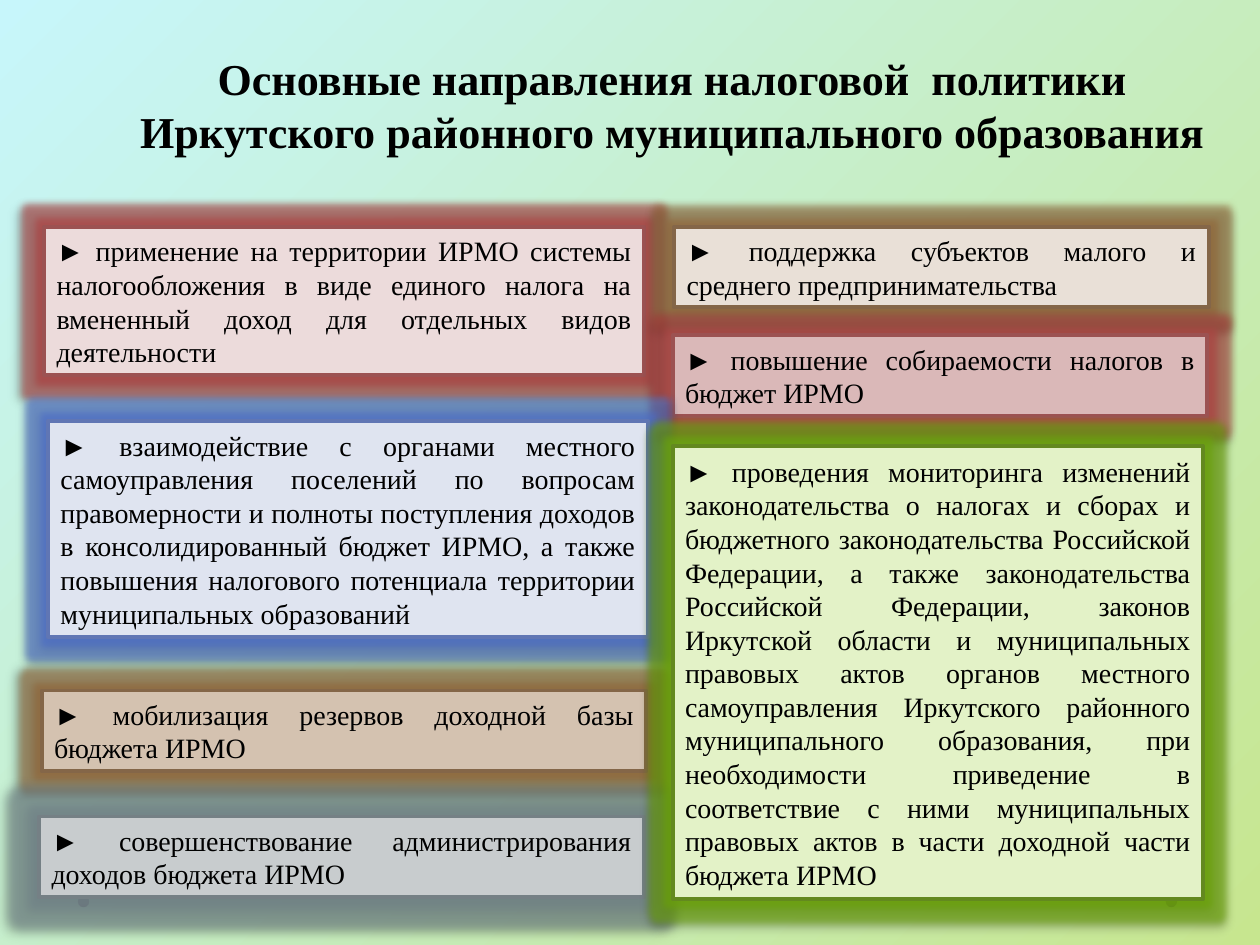
import lxml.etree
import pptx
import pptx.dml.color
import pptx.enum.shapes
import pptx.enum.text
import pptx.oxml
import pptx.oxml.ns
import pptx.util

RGB = pptx.dml.color.RGBColor
Cm = pptx.util.Cm
Pt = pptx.util.Pt
ALIGN = pptx.enum.text.PP_ALIGN
ANCHOR = pptx.enum.text.MSO_ANCHOR
SHAPE = pptx.enum.shapes.MSO_SHAPE

BLACK = RGB(0x00, 0x00, 0x00)
DOT_GRAY = RGB(0x80, 0x80, 0x80)
SKY = RGB(0xC7, 0xF6, 0xFB)
LIME = RGB(0xC7, 0xE6, 0x8F)
# Line colours, each shared by a box border and its glow
RED = RGB(0x9C, 0x52, 0x52)
BROWN = RGB(0x84, 0x66, 0x48)
BLUE = RGB(0x60, 0x76, 0xB4)
GRAY = RGB(0x75, 0x80, 0x85)
GREEN = RGB(0x63, 0x89, 0x1F)
# Box fills
PALE_RED = RGB(0xEC, 0xDB, 0xDB)
ROSE = RGB(0xDA, 0xB8, 0xB8)
PALE_BROWN = RGB(0xE9, 0xE0, 0xD7)
TAN = RGB(0xD4, 0xC2, 0xB0)
PALE_BLUE = RGB(0xDF, 0xE4, 0xF0)
PALE_GRAY = RGB(0xC8, 0xCC, 0xCE)
PALE_GREEN = RGB(0xE3, 0xF2, 0xC7)

# Left, top, width, height in cm; fill, line, glow in points, shadow angle, text
DIRECTIONS = [
    (0.89, 4.57, 12.09, 3.0, PALE_RED, RED, 8, 135,
     "применение на территории ИРМО системы налогообложения в виде единого "
     "налога на вмененный доход для отдельных видов деятельности"),
    (13.59, 4.57, 10.78, 1.63, PALE_BROWN, BROWN, 8, 90,
     "поддержка субъектов малого и среднего предпринимательства"),
    (13.56, 6.76, 10.78, 1.63, ROSE, RED, 8, 90,
     "повышение собираемости налогов в бюджет ИРМО"),
    (0.97, 8.48, 12.09, 4.37, PALE_BLUE, BLUE, 8, 90,
     "взаимодействие с органами местного самоуправления поселений по вопросам "
     "правомерности и полноты поступления доходов в консолидированный бюджет "
     "ИРМО, а также повышения налогового потенциала территории муниципальных "
     "образований"),
    (0.84, 13.92, 12.19, 1.63, TAN, BROWN, 8, 180,
     "мобилизация резервов доходной базы бюджета ИРМО"),
    (0.79, 16.46, 12.19, 1.63, PALE_GRAY, GRAY, 11, 135,
     "совершенствование администрирования доходов бюджета ИРМО"),
    (13.56, 8.99, 10.69, 9.14, PALE_GREEN, GREEN, 8, 90,
     "проведения мониторинга изменений законодательства о налогах и сборах и "
     "бюджетного законодательства Российской Федерации, а также "
     "законодательства Российской Федерации, законов Иркутской области и "
     "муниципальных правовых актов органов местного самоуправления Иркутского "
     "районного муниципального образования, при необходимости приведение в "
     "соответствие с ними муниципальных правовых актов в части доходной части "
     "бюджета ИРМО"),
]


class SlideBuilder:
    font_name = "Times New Roman"
    title_size = Pt(25.2)
    text_size = Pt(16)
    line_width = Pt(2.25)

    def __init__(self, page):
        self.page = page

    def background(self, start, end):
        fill = self.page.background.fill
        fill.gradient()
        fill.gradient_angle = 315
        for stop, color in zip(fill.gradient_stops, (start, end)):
            stop.color.rgb = color

    def style(self, para, size, align, bold=False):
        para.alignment = align
        para.font.name = self.font_name
        para.font.size = size
        para.font.bold = bold
        para.font.color.rgb = BLACK

    def title(self, left, top, width, height, text):
        box = self.page.shapes.title
        box.left, box.top, box.width, box.height = map(Cm, (left, top, width, height))
        frame = box.text_frame
        frame.text = text
        frame.vertical_anchor = ANCHOR.BOTTOM
        frame.auto_size = pptx.enum.text.MSO_AUTO_SIZE.NONE
        self.style(frame.paragraphs[0], self.title_size, ALIGN.CENTER, True)

    def shape(self, kind, left, top, width, height, fill):
        item = self.page.shapes.add_shape(kind, *map(Cm, (left, top, width, height)))
        item.shadow.inherit = False
        item.fill.solid()
        item.fill.fore_color.rgb = fill
        return item

    def dot(self, left, top, size):
        self.shape(SHAPE.OVAL, left, top, size, size, DOT_GRAY).line.fill.background()

    def direction(self, left, top, width, height, fill, line, glow, angle, text):
        box = self.shape(SHAPE.RECTANGLE, left, top, width, height, fill)
        box.line.color.rgb = line
        box.line.width = self.line_width
        self.glow_and_shadow(box, line, glow, angle)
        frame = box.text_frame
        frame.word_wrap = True
        frame.auto_size = pptx.enum.text.MSO_AUTO_SIZE.SHAPE_TO_FIT_TEXT
        frame.text = "► " + text
        self.style(frame.paragraphs[0], self.text_size, ALIGN.JUSTIFY)

    def glow_and_shadow(self, box, color, glow, angle):
        effects = box._element.spPr.find(pptx.oxml.ns.qn("a:effectLst"))
        ns = pptx.oxml.ns.nsdecls("a")
        effects.append(pptx.oxml.parse_xml(
            f'<a:glow {ns} rad="{Pt(glow)}"><a:srgbClr val="{color}">'
            '<a:satMod val="150000"/><a:alpha val="60000"/></a:srgbClr></a:glow>'))
        effects.append(pptx.oxml.parse_xml(
            f'<a:outerShdw {ns} blurRad="{Pt(4)}" dist="{Pt(3)}" dir="{angle * 60000}" '
            'rotWithShape="0"><a:srgbClr val="000000"><a:alpha val="40000"/>'
            '</a:srgbClr></a:outerShdw>'))


def main():
    deck = pptx.Presentation()
    deck.slide_width, deck.slide_height = Cm(25.4), Cm(19.05)
    builder = SlideBuilder(deck.slides.add_slide(deck.slide_layouts[5]))

    # Background and footer dots
    builder.background(SKY, LIME)
    for left in (23.5, 1.57):
        builder.dot(left, 18.06, 0.23)

    # Title
    builder.title(2.36, 0.53, 22.38, 2.77,
                  "Основные направления налоговой  политики "
                  "Иркутского районного муниципального образования")

    # Tax policy directions
    for direction in DIRECTIONS:
        builder.direction(*direction)

    deck.save("out.pptx")


if __name__ == "__main__":
    main()
